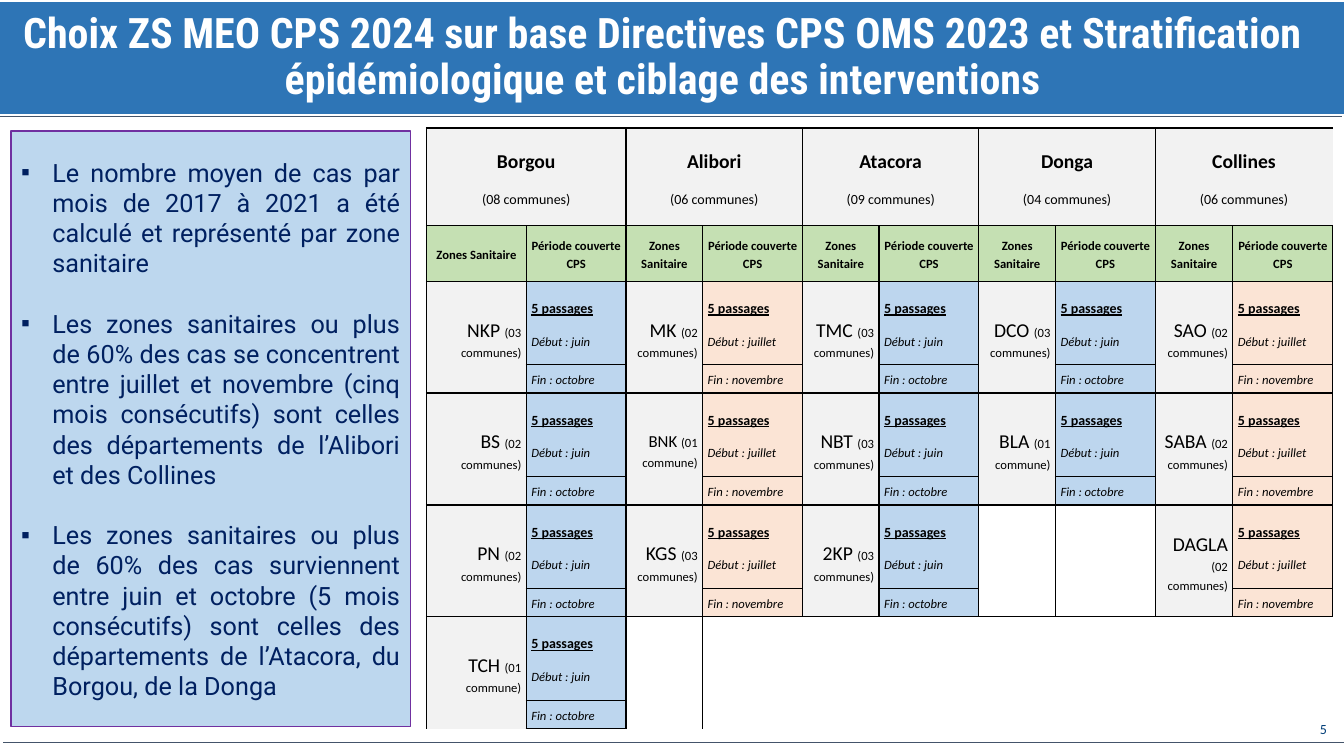
from dataclasses import dataclass

from lxml import etree
from pptx import Presentation
from pptx import util as u
from pptx.dml.color import RGBColor
from pptx.enum import shapes, text
from pptx.oxml import ns

WHITE = RGBColor(0xFF, 0xFF, 0xFF)
BLACK = RGBColor(0, 0, 0)
BANNER = RGBColor(0x2E, 0x75, 0xB6)
RULE = RGBColor(0x44, 0x54, 0x6A)
PANEL = RGBColor(0xBD, 0xD7, 0xEE)
PURPLE = RGBColor(0x70, 0x30, 0xA0)
NAVY = RGBColor(0x00, 0x20, 0x60)
NUMBER = RGBColor(0x00, 0x3E, 0x78)
GREY = RGBColor(0xF2, 0xF2, 0xF2)
GREEN = RGBColor(0xC5, 0xE0, 0xB3)
BLUE = RGBColor(0xBD, 0xD6, 0xEE)
PEACH = RGBColor(0xFB, 0xE4, 0xD5)

ALIGN = text.PP_ALIGN
PLAIN_STYLE = "{2D5ABB26-0587-4C30-8999-92F81FD0307C}"
ZONE_SLOTS = 4


@dataclass(frozen=True)
class Season:
    start: str
    end: str
    color: RGBColor


@dataclass(frozen=True)
class Zone:
    name: str
    communes: str
    size: int = 14


@dataclass(frozen=True)
class Department:
    name: str
    communes: str
    season: Season
    zones: tuple[Zone, ...]


EARLY = Season("juin", "octobre", BLUE)
LATE = Season("juillet", "novembre", PEACH)
TWO, THREE = "(02 communes)", "(03 communes)"
ONE = "(01 commune)"

DEPARTMENTS = (
    Department("Borgou", "(08 communes)", EARLY,
               (Zone("NKP", THREE), Zone("BS", TWO), Zone("PN", TWO), Zone("TCH", ONE))),
    Department("Alibori", "(06 communes)", LATE,
               (Zone("MK", TWO), Zone("BNK", ONE, 12), Zone("KGS", THREE))),
    Department("Atacora", "(09 communes)", EARLY,
               (Zone("TMC", THREE), Zone("NBT", THREE), Zone("2KP", THREE))),
    Department("Donga", "(04 communes)", EARLY,
               (Zone("DCO", THREE), Zone("BLA", ONE))),
    Department("Collines", "(06 communes)", LATE,
               (Zone("SAO", TWO), Zone("SABA", TWO), Zone("DAGLA", TWO))),
)

FINDINGS = (
    "Le nombre moyen de cas par mois de 2017 à 2021 a été calculé et représenté "
    "par zone sanitaire",
    "Les zones sanitaires ou plus de 60% des cas se concentrent entre juillet et "
    "novembre (cinq mois consécutifs) sont celles des départements de l’Alibori "
    "et des Collines",
    "Les zones sanitaires ou plus de 60% des cas surviennent entre juin et octobre "
    "(5 mois consécutifs) sont celles des départements de l’Atacora, du Borgou, "
    "de la Donga",
)


def write(para, words: str, *, size: float, font: str = "Calibri", color: RGBColor = BLACK,
          bold: bool = False, italic: bool = False, underline: bool = False,
          align=ALIGN.LEFT, before: float = 0, spacing: float = 1.0) -> None:
    para.alignment, para.space_before, para.line_spacing = align, u.Pt(before), spacing
    span = para.add_run()
    span.text = words
    span.font.size, span.font.name = u.Pt(size), font
    span.font.color.rgb = color
    span.font.bold, span.font.italic, span.font.underline = bold, italic, underline


def next_para(frame):
    first = frame.paragraphs[0]
    return frame.add_paragraph() if first.runs else first


def place(box, left: float, top: float, width: float, height: float) -> None:
    box.left, box.top = u.Inches(left), u.Inches(top)
    box.width, box.height = u.Inches(width), u.Inches(height)


def prepare(frame) -> None:
    frame.word_wrap = True
    frame.auto_size = text.MSO_AUTO_SIZE.NONE
    frame.vertical_anchor = text.MSO_ANCHOR.MIDDLE


def add_rule(page, left: float, right: float, y: float) -> None:
    rule = page.shapes.add_connector(shapes.MSO_CONNECTOR.STRAIGHT, u.Inches(left),
                                     u.Inches(y), u.Inches(right), u.Inches(y))
    rule.line.color.rgb, rule.line.width = RULE, u.Pt(0.5)
    etree.SubElement(rule._element.spPr, ns.qn("a:effectLst"))


def set_edges(cell, edges: str) -> None:
    """Draw the edges named by the letters L, R, T and B."""
    properties = cell._tc.get_or_add_tcPr()
    for edge in "LRTB":
        if edge in edges:
            line = etree.SubElement(properties, ns.qn(f"a:ln{edge}"), w=str(u.Pt(1)))
            fill = etree.SubElement(line, ns.qn("a:solidFill"))
            etree.SubElement(fill, ns.qn("a:srgbClr"), val=str(BLACK))


def style_cell(cell, edges: str, color: RGBColor | None = None) -> None:
    set_edges(cell, edges)
    cell.margin_left = cell.margin_right = u.Inches(0.05)
    cell.margin_top = cell.margin_bottom = 0
    cell.vertical_anchor = text.MSO_ANCHOR.MIDDLE
    if color is None:
        cell.fill.background()
    else:
        cell.fill.solid()
        cell.fill.fore_color.rgb = color


def fill_cell(cell, words: str, **style) -> None:
    write(next_para(cell.text_frame), words, before=10, spacing=1.2, **style)


def add_headings(table, column: int, department: Department) -> None:
    name, beside = table.cell(0, column), table.cell(0, column + 1)
    style_cell(name, "LTB", GREY)
    style_cell(beside, "RTB", GREY)
    name.merge(beside)
    fill_cell(name, department.name, size=14, bold=True, align=ALIGN.CENTER)
    fill_cell(name, department.communes, size=10, align=ALIGN.CENTER)
    for offset, heading in enumerate(("Zones Sanitaire", "Période couverte CPS")):
        cell = table.cell(1, column + offset)
        style_cell(cell, "LRTB", GREEN)
        fill_cell(cell, heading, size=9, bold=True, align=ALIGN.CENTER)


def add_zone(table, row: int, column: int, zone: Zone, season: Season) -> None:
    for offset, color in enumerate((GREY, season.color)):
        style_cell(table.cell(row, column + offset), "LRT", color)
        style_cell(table.cell(row + 1, column + offset), "LRB", color)
    name = table.cell(row, column)
    name.merge(table.cell(row + 1, column))
    fill_cell(name, f"{zone.name} ", size=zone.size, align=ALIGN.RIGHT)
    fill_cell_para = name.text_frame.paragraphs[0]
    write(fill_cell_para, zone.communes, size=9, align=ALIGN.RIGHT, before=10, spacing=1.2)
    start, end = table.cell(row, column + 1), table.cell(row + 1, column + 1)
    fill_cell(start, "5 passages", size=10, bold=True, underline=True, align=ALIGN.JUSTIFY)
    fill_cell(start, f"Début : {season.start}", size=9, italic=True, align=ALIGN.JUSTIFY)
    fill_cell(end, f"Fin : {season.end}", size=9, italic=True, align=ALIGN.JUSTIFY)


def add_gap(table, row: int, column: int, edges: tuple[str, str]) -> None:
    for offset, sides in enumerate(edges):
        upper, lower = (table.cell(row + step, column + offset) for step in (0, 1))
        style_cell(upper, sides)
        style_cell(lower, sides.replace("T", ""))
        upper.merge(lower)


def add_calendar(page) -> None:
    widths = [0.99, 0.99] + [0.76, 0.99] * 3 + [0.77, 0.99]
    heights = [0.97, 0.55] + [0.83, 0.28] * ZONE_SLOTS
    frame = page.shapes.add_table(len(heights), len(widths), u.Inches(4.23), u.Inches(1.27),
                                  u.Inches(sum(widths)), u.Inches(sum(heights)))
    table = frame.table
    table.first_row = table.horz_banding = False
    table._tbl.tblPr.find(ns.qn("a:tableStyleId")).text = PLAIN_STYLE
    for column, width in zip(table.columns, widths):
        column.width = u.Inches(width)
    for row, height in zip(table.rows, heights):
        row.height = u.Inches(height)

    counts = [len(department.zones) for department in DEPARTMENTS] + [0]
    for index, department in enumerate(DEPARTMENTS):
        column = 2 * index
        add_headings(table, column, department)
        for slot in range(ZONE_SLOTS):
            row = 2 + 2 * slot
            if slot < counts[index]:
                add_zone(table, row, column, department.zones[slot], department.season)
            else:
                top = "T" if slot == counts[index] else ""
                left = "L" if counts[index - 1] > slot else ""
                right = "R" if counts[index + 1] > slot else ""
                add_gap(table, row, column, (left + top, right + top))


def main() -> None:
    deck = Presentation()
    deck.slide_width, deck.slide_height = u.Inches(13.33), u.Inches(7.5)
    page = deck.slides.add_slide(deck.slide_layouts[1])

    # Title banner
    title = page.shapes.title
    place(title, 0, 0.02, 13.33, 1.11)
    title.fill.solid()
    title.fill.fore_color.rgb = BANNER
    prepare(title.text_frame)
    title.text_frame.margin_right = u.Inches(0.28)
    write(title.text_frame.paragraphs[0],
          "Choix ZS MEO CPS 2024 sur base Directives CPS OMS 2023 et Stratification "
          "épidémiologique et ciblage des interventions", size=30, font="Roboto Condensed",
          color=WHITE, bold=True, align=ALIGN.CENTER, before=10, spacing=0.9)

    # Page number and rules
    number = page.shapes.add_textbox(u.Inches(10.26), u.Inches(7.1), u.Inches(3), u.Inches(0.4))
    number.text_frame.word_wrap = True
    write(number.text_frame.paragraphs[0], "5", size=10, color=NUMBER, align=ALIGN.RIGHT)
    add_rule(page, 0.03, 13.33, 7.36)
    add_rule(page, 0, 13.31, 1.15)

    # Findings panel
    panel = page.placeholders[1]
    place(panel, 0.11, 1.3, 3.96, 5.91)
    panel.fill.solid()
    panel.fill.fore_color.rgb = PANEL
    panel.line.color.rgb, panel.line.width = PURPLE, u.Pt(1)
    prepare(panel.text_frame)
    for index, finding in enumerate(FINDINGS):
        para = next_para(panel.text_frame)
        write(para, finding, size=18, font="Roboto", color=NAVY, align=ALIGN.JUSTIFY,
              before=21.5 if index else 0)
        properties = para._p.get_or_add_pPr()
        properties.set("marL", str(u.Inches(0.31)))
        properties.set("indent", str(-u.Inches(0.31)))
        etree.SubElement(properties, ns.qn("a:buChar"), char="▪")

    # Calendar by department
    add_calendar(page)
    deck.save("out.pptx")


if __name__ == "__main__":
    main()
